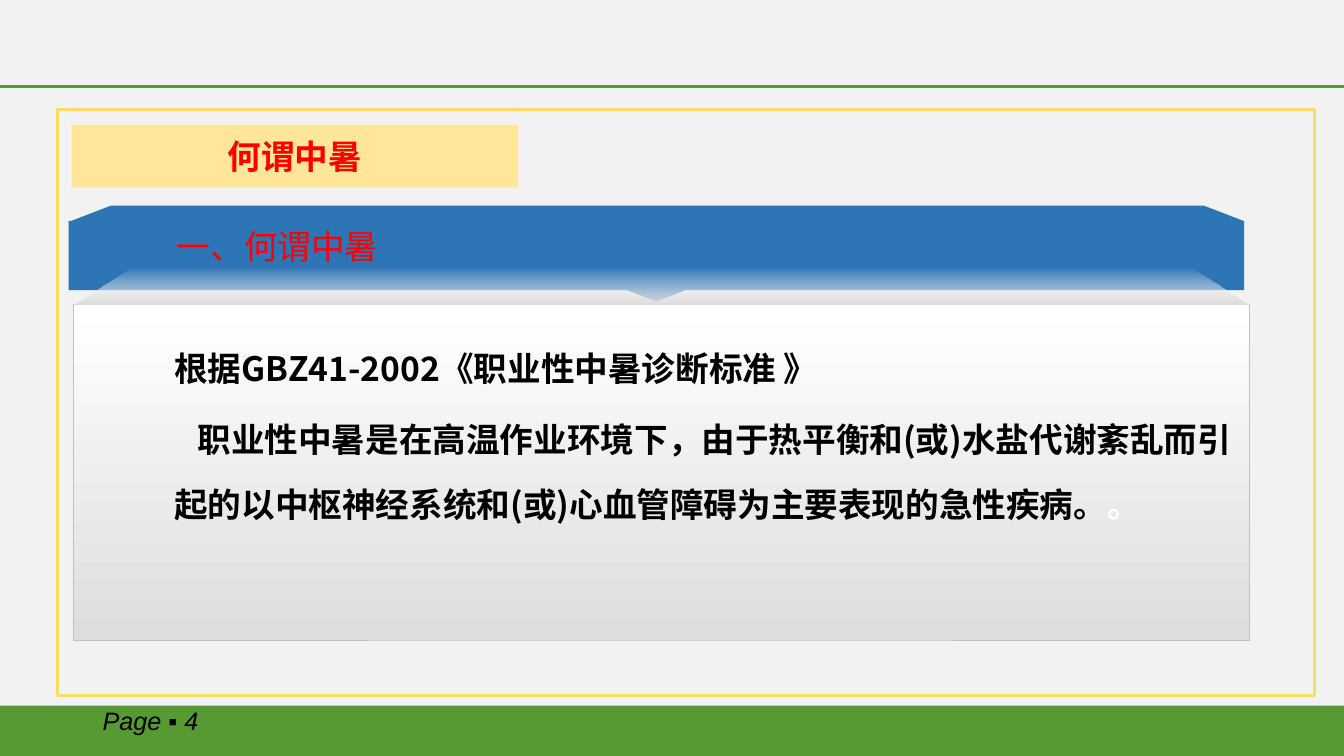
import pptx
import pptx.util
import pptx.dml.color
import pptx.enum.shapes
import pptx.enum.text
import pptx.oxml.ns
from lxml import etree

SHAPE = pptx.enum.shapes.MSO_SHAPE
ALIGN = pptx.enum.text.PP_ALIGN
ANCHOR = pptx.enum.text.MSO_ANCHOR
qn = pptx.oxml.ns.qn
CJK = "Noto Sans CJK SC"
GREEN, BLUE, RED = "579933", "2E75B6", "FF0000"


def color(value):
    return pptx.dml.color.RGBColor.from_string(value)


class SlideBuilder:
    """Places elements by percent of the slide's width and height."""

    def __init__(self, presentation, background):
        self.width = presentation.slide_width
        self.height = presentation.slide_height
        self.slide = presentation.slides.add_slide(presentation.slide_layouts[6])
        self.shapes = self.slide.shapes
        fill = self.slide.background.fill
        fill.solid()
        fill.fore_color.rgb = color(background)

    def x(self, percent):
        return round(self.width * percent / 100)

    def y(self, percent):
        return round(self.height * percent / 100)

    def box(self, left, top, width, height):
        return self.x(left), self.y(top), self.x(width), self.y(height)

    def paint(self, shape, fill=None, line=None, weight=1.0):
        """A pair of fill colours makes a gradient from top to bottom."""
        shape.shadow.inherit = False
        if fill is None:
            shape.fill.background()
        elif isinstance(fill, tuple):
            shape.fill.gradient()
            shape.fill.gradient_angle = 270
            for stop, value in zip(shape.fill.gradient_stops, fill):
                stop.color.rgb = color(value)
        else:
            shape.fill.solid()
            shape.fill.fore_color.rgb = color(fill)
        if line is None:
            shape.line.fill.background()
        else:
            shape.line.color.rgb = color(line)
            shape.line.width = pptx.util.Pt(weight)
        return shape

    def shape(self, kind, place, **style):
        return self.paint(self.shapes.add_shape(kind, *self.box(*place)), **style)

    def trapezoid(self, left, top, width, height, inset, **style):
        right, bottom = left + width, top + height
        corners = [(right, bottom), (right - inset, top), (left + inset, top), (left, bottom)]
        points = [(self.x(across), self.y(down)) for across, down in corners]
        builder = self.shapes.build_freeform(*points[0])
        builder.add_line_segments(points[1:], close=True)
        return self.paint(builder.convert_to_shape(), **style)

    def rule(self, down, line, weight):
        connector = self.shapes.add_connector(
            pptx.enum.shapes.MSO_CONNECTOR.STRAIGHT, 0, self.y(down), self.width, self.y(down))
        connector.line.color.rgb = color(line)
        connector.line.width = pptx.util.Pt(weight)
        etree.SubElement(connector._element.spPr, qn("a:effectLst"))

    def text_box(self, place, wrap=True):
        text_frame = self.shapes.add_textbox(*self.box(*place)).text_frame
        text_frame.word_wrap = wrap
        return text_frame

    def format_run(self, run, size, font, value, bold=False, italic=False):
        run.font.size = pptx.util.Pt(size)
        run.font.name = font
        run.font.bold = bold
        run.font.italic = italic
        run.font.color.rgb = color(value)
        east_asian = etree.Element(qn("a:ea"), typeface=font)
        run.font._element.find(qn("a:latin")).addnext(east_asian)

    def set_text(self, text_frame, text, align=ALIGN.LEFT, **style):
        text_frame.text = text
        paragraph = text_frame.paragraphs[0]
        paragraph.alignment = align
        self.format_run(paragraph.runs[0], **style)
        return paragraph


def main():
    presentation = pptx.Presentation()
    presentation.slide_width = pptx.util.Inches(13.33)
    presentation.slide_height = pptx.util.Inches(7.5)
    page = SlideBuilder(presentation, "F2F2F2")

    # Footer band, header rule and page number
    page.shape(SHAPE.RECTANGLE, (0, 93.33, 100, 6.67), fill=GREEN)
    page.rule(11.47, GREEN, 2.25)
    page.set_text(page.text_box((6.9, 92.67, 22.5, 5.33)), "Page ▪ 4",
                  size=18, font="Arial", value="000000", italic=True)

    # Blue heading banner with its pointer and bevel
    banner = page.shape(SHAPE.DOWN_ARROW_CALLOUT, (5.1, 29.2, 87.47, 10.67), fill=BLUE)
    for index, value in enumerate((0.727, 0.363, 0.14, 0.859)):
        banner.adjustments[index] = value
    page.trapezoid(5.33, 27.2, 87.17, 2, inset=2.92, fill=BLUE)

    # Grey panel with a bevel that fades out upwards
    page.shape(SHAPE.RECTANGLE, (5.48, 40.27, 87.47, 44.4),
               fill=("FFFFFF", "DDDDDD"), line="C0C0C0", weight=0.25)
    bevel = page.trapezoid(5.48, 35.33, 87.47, 4.94, inset=4.4, fill=("FFFFFF", "DDDDDD"))
    top_color = bevel._element.spPr.find(".//" + qn("a:srgbClr"))
    etree.SubElement(top_color, qn("a:alpha"), val="0")

    # Heading with a thin white outline
    heading = page.set_text(page.text_box((9, 29.2, 23.33, 6.8), wrap=False), "一、何谓中暑",
                            align=ALIGN.CENTER, size=24, font=CJK, value=RED)
    outline = etree.Element(qn("a:ln"), w=str(pptx.util.Pt(0.75)))
    outline_fill = etree.SubElement(outline, qn("a:solidFill"))
    etree.SubElement(outline_fill, qn("a:srgbClr"), val="FFFFFF")
    heading.runs[0].font._element.insert(0, outline)

    # Definition
    body = page.text_box((12.23, 42.67, 80.35, 30.67))
    source = page.set_text(body, "根据GBZ41-2002《职业性中暑诊断标准 》",
                           size=24, font=CJK, value="000000", bold=True)
    source.line_spacing = 1.5
    definition = body.add_paragraph()
    definition.line_spacing = 1.6
    definition.space_before = pptx.util.Pt(5)
    definition._p.get_or_add_pPr().set("indent", str(pptx.util.Inches(0.23)))
    sentence = "职业性中暑是在高温作业环境下，由于热平衡和(或)水盐代谢紊乱而引起的以中枢神经系统和(或)心血管障碍为主要表现的急性疾病。"
    for text, value in ((sentence, "000000"), ("。", "FFFFFF")):
        run = definition.add_run()
        run.text = text
        page.format_run(run, 24, CJK, value, bold=True)

    # Yellow frame and title tag
    page.shape(SHAPE.RECTANGLE, (4.28, 14.53, 93.55, 77.47), line="FFD966", weight=2.25)
    tag = page.shape(SHAPE.RECTANGLE, (5.33, 16.53, 33.23, 8.27), fill="FFE699")
    tag.text_frame.vertical_anchor = ANCHOR.MIDDLE
    page.set_text(tag.text_frame, "何谓中暑", align=ALIGN.CENTER,
                  size=24, font=CJK, value=RED, bold=True)

    presentation.save("out.pptx")


if __name__ == "__main__":
    main()
